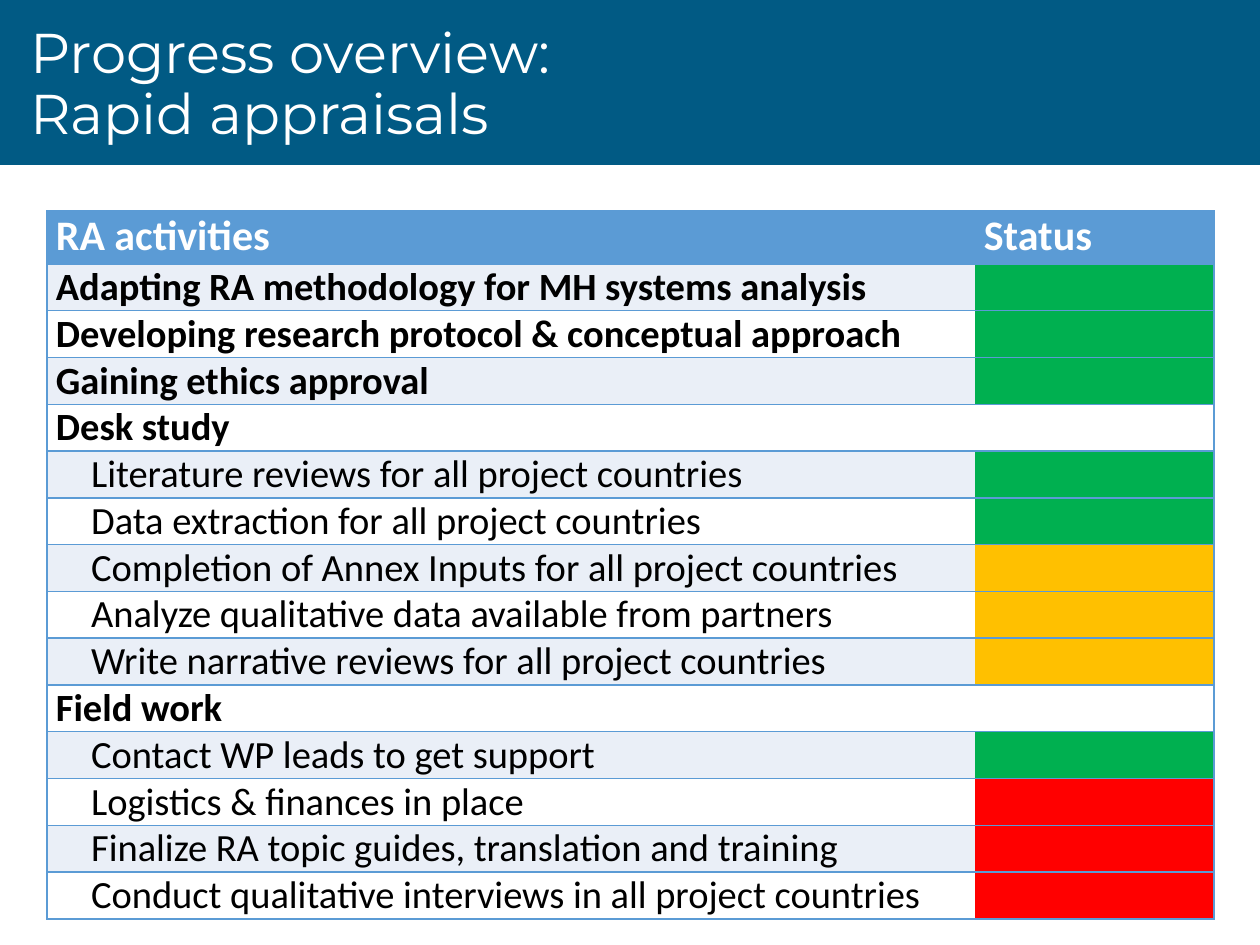
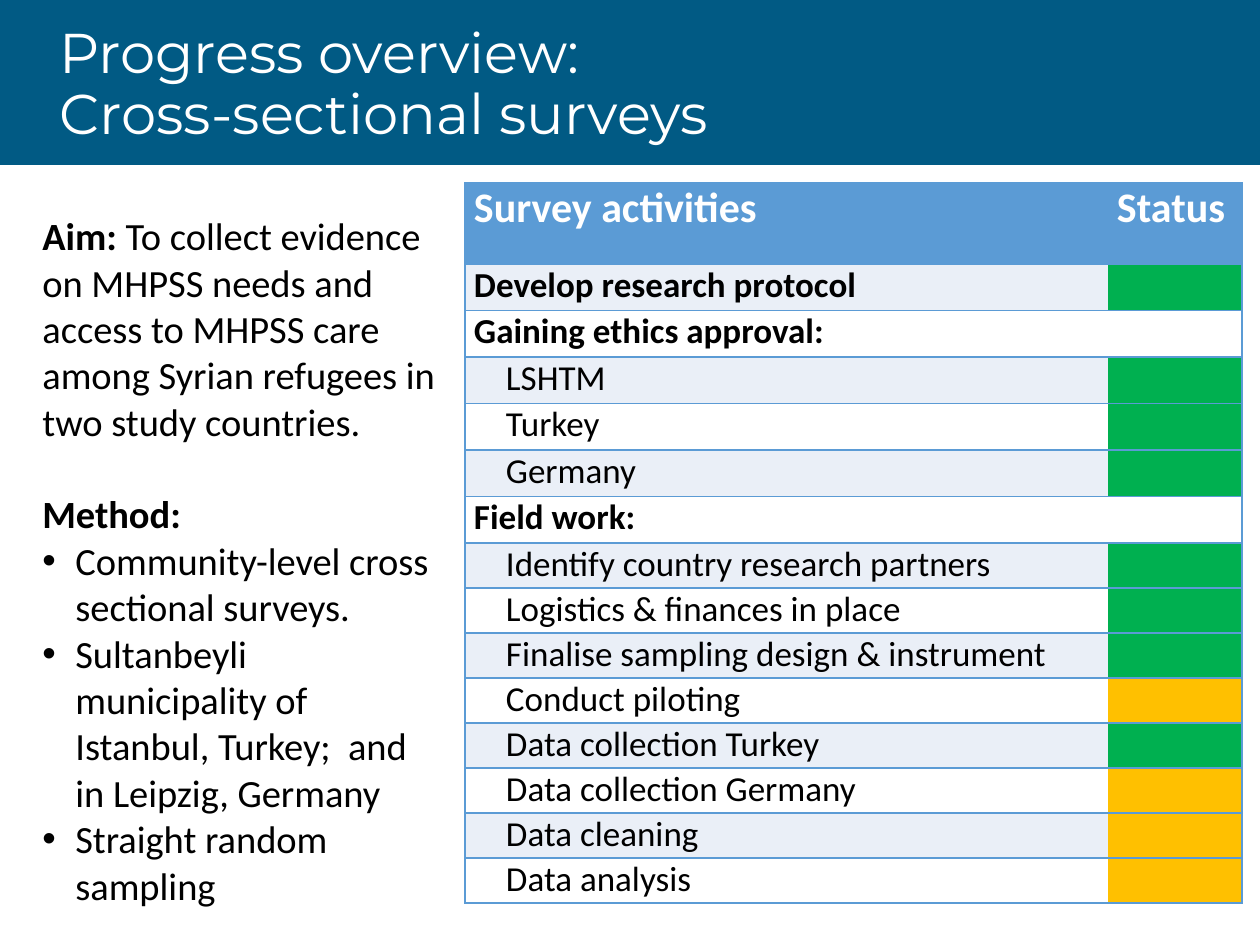
"""Two progress slides: a title band and a traffic-light activity table on each."""
from itertools import accumulate

from pptx import Presentation
from pptx import util as u
from pptx.dml.color import RGBColor
from pptx.enum import shapes, text
from pptx.oxml import parse_xml
from pptx.oxml.ns import nsdecls

PX = 914400 // 126
BAND, BLUE, PALE, WHITE, BLACK = "015A84", "5B9BD5", "EAEFF7", "FFFFFF", "000000"
DONE, ONGOING, PENDING, NO_STATUS = "00B050", "FFC000", "FF0000", WHITE
MAIN, SUB = 0, 1
BODY_FONT, TITLE_FONT = "Calibri", "Montserrat"
HEADER_SIZE, TITLE_SIZE, AIM_SIZE, AIM_LINE = 24, 32, 22, 26.5

APPRAISALS = {
    "title": ("Progress overview:", "Rapid appraisals"),
    "title_box": (18, 19, 932, 134),
    "header": ("RA activities", "Status"),
    "edges": (47, 975, 1214),
    "top": 211,
    "row_bands": ((1, 53), (14, 655)),
    "size": 22,
    "activities": [
        ("Adapting RA methodology for MH systems analysis", MAIN, DONE),
        ("Developing research protocol & conceptual approach", MAIN, DONE),
        ("Gaining ethics approval", MAIN, DONE),
        ("Desk study", MAIN, NO_STATUS),
        ("Literature reviews for all project countries", SUB, DONE),
        ("Data extraction for all project countries", SUB, DONE),
        ("Completion of Annex Inputs for all project countries", SUB, ONGOING),
        ("Analyze qualitative data available from partners", SUB, ONGOING),
        ("Write narrative reviews for all project countries", SUB, ONGOING),
        ("Field work", MAIN, NO_STATUS),
        ("Contact WP leads to get support", SUB, DONE),
        ("Logistics & finances in place", SUB, PENDING),
        ("Finalize RA topic guides, translation and training", SUB, PENDING),
        ("Conduct qualitative interviews in all project countries", SUB, PENDING),
    ],
}

SURVEYS = {
    "title": ("Progress overview:", "Cross-sectional surveys"),
    "title_box": (47, 19, 903, 134),
    "header": ("Survey activities", "Status"),
    "edges": (465, 1108, 1242),
    "top": 183,
    "row_bands": ((1, 81), (6, 279), (8, 360)),
    "size": 20,
    "activities": [
        ("Develop research protocol", MAIN, DONE),
        ("Gaining ethics approval:", MAIN, NO_STATUS),
        ("LSHTM", SUB, DONE),
        ("Turkey", SUB, DONE),
        ("Germany", SUB, DONE),
        ("Field work:", MAIN, NO_STATUS),
        ("Identify country research partners", SUB, DONE),
        ("Logistics & finances in place", SUB, DONE),
        ("Finalise sampling design & instrument", SUB, DONE),
        ("Conduct piloting", SUB, ONGOING),
        ("Data collection Turkey", SUB, DONE),
        ("Data collection Germany", SUB, ONGOING),
        ("Data cleaning", SUB, ONGOING),
        ("Data analysis", SUB, ONGOING),
    ],
}

AIM_BOX = (30, 203, 425, 700)
AIM = ("Aim: ", "To collect evidence on MHPSS needs and access to MHPSS care "
       "among Syrian refugees in two study countries.")
METHOD = "Method:"
METHODS = [
    "Community-level cross sectional surveys.",
    "Sultanbeyli municipality of Istanbul, Turkey;  and in Leipzig, Germany",
    "Straight random sampling",
]


def px(length):
    return round(length * PX)


def rgb(value):
    return RGBColor.from_string(value)


def add_run(paragraph, words, size, color=BLACK, bold=False, font=BODY_FONT):
    run = paragraph.add_run()
    run.text = words
    run.font.size, run.font.bold, run.font.name = u.Pt(size), bold, font
    run.font.color.rgb = rgb(color)


def add_text_frame(slide, box):
    frame = slide.shapes.add_textbox(*map(px, box)).text_frame
    frame.word_wrap = True
    return frame


def add_title(slide, lines, box):
    band = slide.shapes.add_shape(shapes.MSO_SHAPE.RECTANGLE, 0, 0, px(1260), px(165))
    band.shadow.inherit = False
    band.fill.solid()
    band.fill.fore_color.rgb = rgb(BAND)
    band.line.fill.background()
    frame = add_text_frame(slide, box)
    frame.vertical_anchor = text.MSO_ANCHOR.MIDDLE
    title = frame.paragraphs[0]
    title.line_spacing = 0.9
    for number, line in enumerate(lines):
        if number:
            title.add_line_break()
        add_run(title, line, TITLE_SIZE, WHITE, font=TITLE_FONT)


def style_cell(cell, fill, outer_side):
    cell.margin_left = cell.margin_right = px(9)
    cell.margin_top = cell.margin_bottom = 0
    for side in "LRTB":
        if side in "TB" or side == outer_side:
            paint = f'<a:solidFill><a:srgbClr val="{BLUE}"/></a:solidFill>'
        else:
            paint = "<a:noFill/>"
        border = f'<a:ln{side} {nsdecls("a")} w="12700">{paint}</a:ln{side}>'
        cell._tc.get_or_add_tcPr().append(parse_xml(border))
    cell.fill.solid()
    cell.fill.fore_color.rgb = rgb(fill)


def add_activities(slide, plan):
    heights = [total / count for count, total in plan["row_bands"] for _ in range(count)]
    bottoms = [px(y) for y in accumulate(heights, initial=0)]
    left, middle, right = map(px, plan["edges"])
    table = slide.shapes.add_table(len(heights), 2, left, px(plan["top"]),
                                   right - left, bottoms[-1]).table
    table.columns[0].width, table.columns[1].width = middle - left, right - middle
    for row, upper, lower in zip(table.rows, bottoms, bottoms[1:]):
        row.height = lower - upper

    for column, heading in enumerate(plan["header"]):
        cell = table.cell(0, column)
        style_cell(cell, BLUE, "LR"[column])
        add_run(cell.text_frame.paragraphs[0], heading, HEADER_SIZE, WHITE, True)

    for number, (activity, level, status) in enumerate(plan["activities"], 1):
        name_cell, status_cell = table.cell(number, 0), table.cell(number, 1)
        style_cell(name_cell, PALE if number % 2 else WHITE, "L")
        style_cell(status_cell, status, "R")
        name = name_cell.text_frame.paragraphs[0]
        if level == SUB:
            name._p.get_or_add_pPr().set("marL", str(px(plan["size"] * 1.6)))
        add_run(name, activity, plan["size"], bold=level == MAIN)


def add_aim(slide):
    frame = add_text_frame(slide, AIM_BOX)
    frame.margin_top = px(9)
    aim = frame.paragraphs[0]
    add_run(aim, AIM[0], AIM_SIZE, bold=True)
    add_run(aim, AIM[1], AIM_SIZE)
    method = frame.add_paragraph()
    method.space_before = u.Pt(AIM_LINE)
    add_run(method, METHOD, AIM_SIZE, bold=True)
    for step in METHODS:
        bullet = frame.add_paragraph()
        properties = bullet._p.get_or_add_pPr()
        properties.set("marL", str(px(33)))
        properties.set("indent", str(px(-33)))
        properties.append(parse_xml(f'<a:buFont {nsdecls("a")} typeface="Arial"/>'))
        properties.append(parse_xml(f'<a:buChar {nsdecls("a")} char="•"/>'))
        add_run(bullet, step, AIM_SIZE)
    for paragraph in frame.paragraphs:
        paragraph.line_spacing = u.Pt(AIM_LINE)


def main():
    deck = Presentation()
    deck.slide_width, deck.slide_height = px(1260), px(945)
    for plan in (APPRAISALS, SURVEYS):
        slide = deck.slides.add_slide(deck.slide_layouts[6])
        add_title(slide, plan["title"], plan["title_box"])
        if plan is SURVEYS:
            add_aim(slide)
        add_activities(slide, plan)
    deck.save("out.pptx")


if __name__ == "__main__":
    main()
